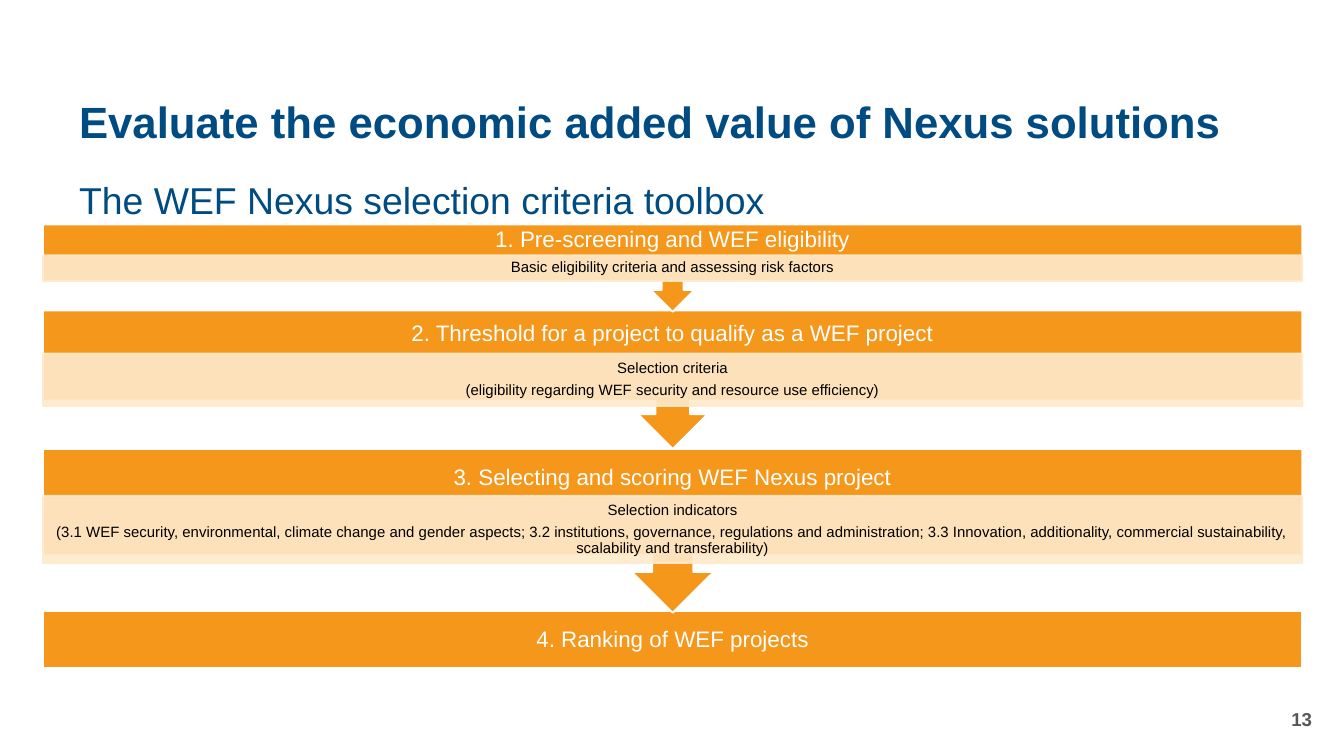
from dataclasses import dataclass

from lxml.etree import SubElement
from pptx import Presentation
from pptx.dml.color import RGBColor
from pptx.enum.shapes import MSO_SHAPE
from pptx.enum.text import MSO_ANCHOR, PP_ALIGN
from pptx.oxml.ns import qn
from pptx.util import Inches, Pt

FONT = "Arial"
NAVY, ORANGE, CREAM = "004C82", "F4971A", "FEEACC"
WHITE, BLACK, GREY = "FFFFFF", "000000", "575756"
SLIDE_WIDTH = 10
SLIDE_HEIGHT = SLIDE_WIDTH * 9 / 16
LEFT, WIDTH = 0.32, 9.37
HEADING_INSETS = (0.09, 0.09, 0.09, 0.09)
DETAIL_INSETS = (0.06, 0.01, 0.06, 0.01)
TEXT_INSETS = (0.1, 0.05, 0.1, 0.05)


@dataclass(frozen=True)
class Box:
    left: float
    top: float
    width: float
    height: float

    def lengths(self) -> list:
        return [Inches(value) for value in (self.left, self.top, self.width, self.height)]


@dataclass(frozen=True)
class Step:
    heading: str
    top: float
    height: float
    heading_height: float
    details: tuple = ()
    detail_top: float = 0
    detail_height: float = 0


STEPS = (
    Step("1. Pre-screening and WEF eligibility", 1.67, 0.65, 0.23,
         ("Basic eligibility criteria and assessing risk factors",), 1.9, 0.19),
    Step("2. Threshold for a project to qualify as a WEF project", 2.31, 1.03, 0.36,
         ("Selection criteria",
          "(eligibility regarding WEF security and resource use efficiency)"), 2.63, 0.39),
    Step("3. Selecting and scoring WEF Nexus project", 3.34, 1.22, 0.43,
         ("Selection indicators",
          "(3.1 WEF security, environmental, climate change and gender aspects; "
          "3.2 institutions, governance, regulations and administration; "
          "3.3 Innovation, additionality, commercial sustainability, "
          "scalability and transferability)"), 3.69, 0.5),
    Step("4. Ranking of WEF projects", 4.55, 0.42, 0.42),
)


def color(value: str) -> RGBColor:
    return RGBColor.from_string(value)


def add_text(slide, box: Box, lines: tuple, size: float, text_color: str, insets: tuple,
             bold: bool = False, align=PP_ALIGN.LEFT, anchor=MSO_ANCHOR.MIDDLE,
             line_spacing: float = 0.9, space_after: float = 0) -> None:
    frame = slide.shapes.add_textbox(*box.lengths()).text_frame
    left, top, right, bottom = (Inches(inset) for inset in insets)
    frame_format = {"word_wrap": True, "vertical_anchor": anchor, "margin_left": left,
                    "margin_top": top, "margin_right": right, "margin_bottom": bottom}
    for name, value in frame_format.items():
        setattr(frame, name, value)
    frame.text = "\n".join(lines)
    paragraph_format = {"alignment": align, "line_spacing": line_spacing,
                        "space_before": Pt(0), "space_after": Pt(space_after)}
    font_format = {"name": FONT, "size": Pt(size), "bold": bold}
    for paragraph in frame.paragraphs:
        for name, value in paragraph_format.items():
            setattr(paragraph, name, value)
        for name, value in font_format.items():
            setattr(paragraph.font, name, value)
        paragraph.font.color.rgb = color(text_color)


def add_block(slide, kind: MSO_SHAPE, box: Box, fill: str, line: str,
              rotation: float = 0, opacity: int = 100) -> None:
    shape = slide.shapes.add_shape(kind, *box.lengths())
    shape.rotation = rotation
    shape.shadow.inherit = False
    shape.fill.solid()
    shape.fill.fore_color.rgb = color(fill)
    shape.line.color.rgb = color(line)
    shape.line.width = Pt(1)
    if opacity < 100:
        for element in shape._element.spPr.iter(qn("a:srgbClr")):
            SubElement(element, qn("a:alpha"), val=str(opacity * 1000))


def add_step(slide, step: Step) -> None:
    kind, rotation = (MSO_SHAPE.UP_ARROW_CALLOUT, 180) if step.details else (MSO_SHAPE.RECTANGLE, 0)
    add_block(slide, kind, Box(LEFT, step.top, WIDTH, step.height), ORANGE, WHITE, rotation)
    add_text(slide, Box(LEFT, step.top, WIDTH, step.heading_height), (step.heading,),
             12, WHITE, HEADING_INSETS, align=PP_ALIGN.CENTER)
    if step.details:
        band = Box(LEFT, step.detail_top, WIDTH, step.detail_height)
        add_block(slide, MSO_SHAPE.RECTANGLE, band, CREAM, CREAM, opacity=90)
        add_text(slide, band, step.details, 8, BLACK, DETAIL_INSETS,
                 align=PP_ALIGN.CENTER, space_after=3.3)


def main() -> None:
    """Build the selection criteria slide and save it."""
    presentation = Presentation()
    presentation.slide_width = Inches(SLIDE_WIDTH)
    presentation.slide_height = Inches(SLIDE_HEIGHT)
    slide = presentation.slides.add_slide(presentation.slide_layouts[6])
    add_text(slide, Box(0.49, 1.36, 9.37, 0.3), ("The WEF Nexus selection criteria toolbox",),
             20, NAVY, (0.1, 0, 0.08, 0), anchor=MSO_ANCHOR.TOP)
    for step in reversed(STEPS):
        add_step(slide, step)
    add_text(slide, Box(0.49, 0.63, 9.37, 0.59),
             ("Evaluate the economic added value of Nexus solutions",),
             23.4, NAVY, TEXT_INSETS, bold=True)
    add_text(slide, Box(7.61, 5.2, 2.25, 0.3), ("13",), 10, GREY, TEXT_INSETS,
             bold=True, align=PP_ALIGN.RIGHT, line_spacing=1.0)
    presentation.save("out.pptx")


if __name__ == "__main__":
    main()
